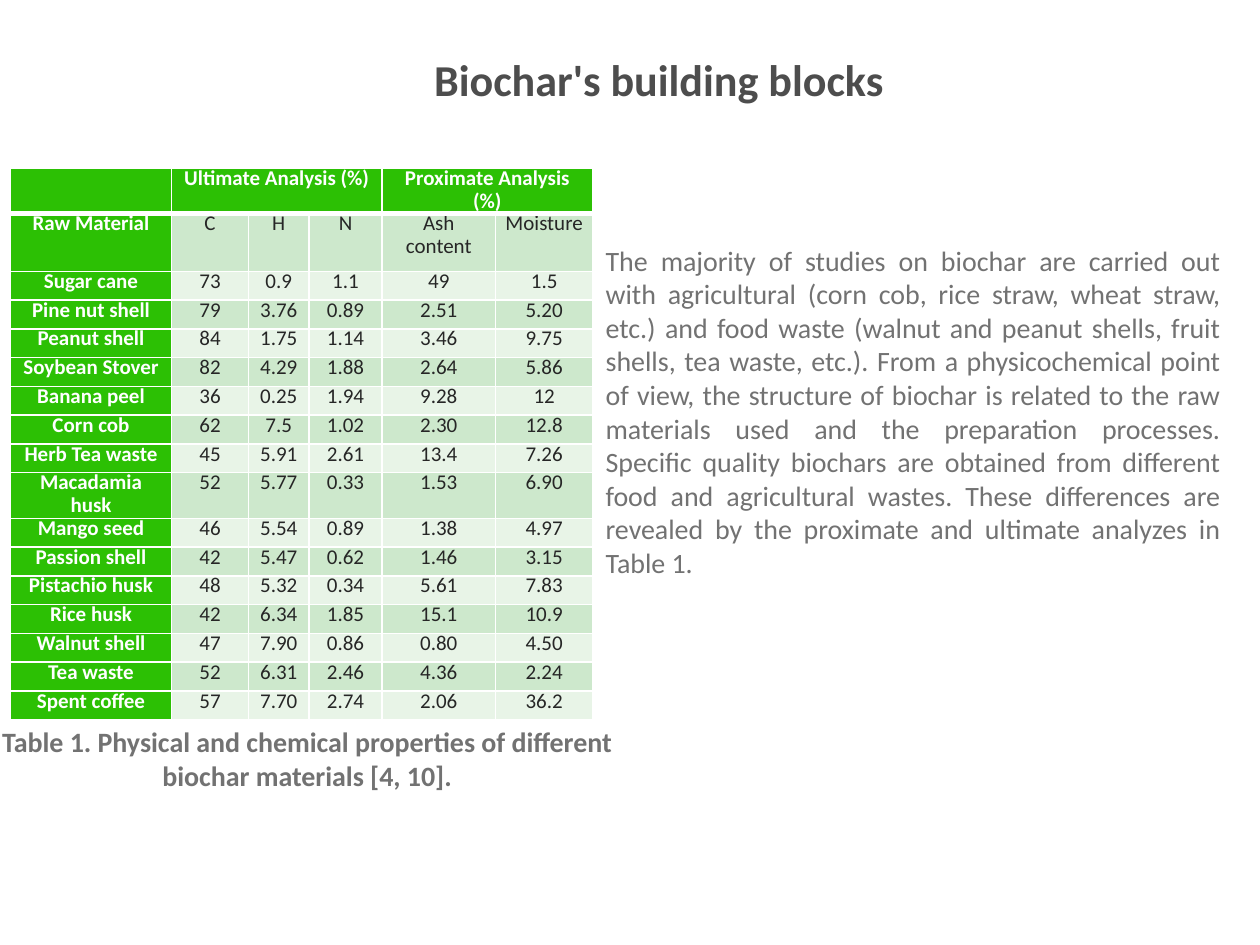
from lxml.etree import SubElement
from pptx import Presentation
from pptx.dml.color import RGBColor
from pptx.enum.text import MSO_ANCHOR, PP_ALIGN
from pptx.oxml.ns import qn
from pptx.util import Cm, Pt

FONT = "Calibri"
WHITE = RGBColor(0xFF, 0xFF, 0xFF)
GREEN = RGBColor(0x2C, 0xC0, 0x04)
DARK_BAND = RGBColor(0xCD, 0xE8, 0xCC)
LIGHT_BAND = RGBColor(0xE8, 0xF4, 0xE7)
TITLE_GRAY = RGBColor(0x4D, 0x4D, 0x4D)
TEXT_GRAY = RGBColor(0x72, 0x72, 0x72)
CELL_TEXT = RGBColor(0x26, 0x26, 0x26)

BODY = (
    "The majority of studies on biochar are carried out with agricultural (corn cob, "
    "rice straw, wheat straw, etc.) and food waste (walnut and peanut shells, fruit "
    "shells, tea waste, etc.). From a physicochemical point of view, the structure of "
    "biochar is related to the raw materials used and the preparation processes. "
    "Specific quality biochars are obtained from different food and agricultural "
    "wastes. These differences are revealed by the proximate and ultimate analyzes "
    "in Table 1."
)
CAPTION = (
    "Table 1. Physical and chemical properties of different biochar materials [4, 10]."
)

COLUMN_WIDTHS = (3.25, 1.55, 1.22, 1.47, 2.29, 1.96)
GROUP_HEIGHT, HEADING_HEIGHT, ROW_HEIGHT = 0.91, 1.16, 0.58
ROWS = (
    ("", "Ultimate Analysis (%)", "", "", "Proximate Analysis (%)", ""),
    ("Raw Material", "C", "H", "N", "Ash content", "Moisture"),
    ("Sugar cane", "73", "0.9", "1.1", "49", "1.5"),
    ("Pine nut shell", "79", "3.76", "0.89", "2.51", "5.20"),
    ("Peanut shell", "84", "1.75", "1.14", "3.46", "9.75"),
    ("Soybean Stover", "82", "4.29", "1.88", "2.64", "5.86"),
    ("Banana peel", "36", "0.25", "1.94", "9.28", "12"),
    ("Corn cob", "62", "7.5", "1.02", "2.30", "12.8"),
    ("Herb Tea waste", "45", "5.91", "2.61", "13.4", "7.26"),
    ("Macadamia husk", "52", "5.77", "0.33", "1.53", "6.90"),
    ("Mango seed", "46", "5.54", "0.89", "1.38", "4.97"),
    ("Passion shell", "42", "5.47", "0.62", "1.46", "3.15"),
    ("Pistachio husk", "48", "5.32", "0.34", "5.61", "7.83"),
    ("Rice husk", "42", "6.34", "1.85", "15.1", "10.9"),
    ("Walnut shell", "47", "7.90", "0.86", "0.80", "4.50"),
    ("Tea waste", "52", "6.31", "2.46", "4.36", "2.24"),
    ("Spent coffee", "57", "7.70", "2.74", "2.06", "36.2"),
)


def format_text(text_frame, text, size, color, bold, alignment):
    text_frame.text = text
    paragraph = text_frame.paragraphs[0]
    paragraph.alignment = alignment
    for run in paragraph.runs:
        run.font.name = FONT
        run.font.size = Pt(size)
        run.font.bold = bold
        run.font.color.rgb = color
    return paragraph


def add_title(slide, left, top, width, height):
    title = slide.shapes.title
    title.left, title.top, title.width, title.height = left, top, width, height
    title.text_frame.vertical_anchor = MSO_ANCHOR.MIDDLE
    title.text_frame.word_wrap = True
    format_text(title.text_frame, "Biochar's building blocks", 25.2, TITLE_GRAY,
                True, PP_ALIGN.CENTER)


def add_text(slide, left, top, width, height, text, bold, alignment):
    box = slide.shapes.add_textbox(left, top, width, height)
    box.text_frame.word_wrap = True
    format_text(box.text_frame, text, 16, TEXT_GRAY, bold, alignment)


def set_borders(cell, top, bottom):
    """Draw white cell borders; they must precede the fill in the XML."""
    properties = cell._tc.get_or_add_tcPr()
    for side, width in (("L", 1), ("R", 1), ("T", top), ("B", bottom)):
        line = SubElement(properties, qn(f"a:ln{side}"), w=str(Pt(width)))
        fill = SubElement(line, qn("a:solidFill"))
        SubElement(fill, qn("a:srgbClr"), val=str(WHITE))


def format_cell(cell, text, row, column):
    is_header = row == 0 or column == 0
    cell.margin_left = cell.margin_right = Cm(0.18)
    cell.margin_top = cell.margin_bottom = 0
    set_borders(cell, 3 if row == 1 else 1, 3 if row == 0 else 1)
    cell.fill.solid()
    band = DARK_BAND if row % 2 else LIGHT_BAND
    cell.fill.fore_color.rgb = GREEN if is_header else band
    paragraph = format_text(cell.text_frame, text, 12,
                            WHITE if is_header else CELL_TEXT,
                            is_header, PP_ALIGN.CENTER)
    paragraph.line_spacing = Pt(13)


def add_analysis_table(slide, left, top):
    heights = [GROUP_HEIGHT, HEADING_HEIGHT] + [ROW_HEIGHT] * (len(ROWS) - 2)
    table = slide.shapes.add_table(
        len(ROWS), len(COLUMN_WIDTHS), left, top,
        Cm(sum(COLUMN_WIDTHS)), Cm(sum(heights))).table
    table.first_col = True
    for column, width in zip(table.columns, COLUMN_WIDTHS):
        column.width = Cm(width)
    for row, height in zip(table.rows, heights):
        row.height = Cm(height)
    for row, texts in enumerate(ROWS):
        for column, text in enumerate(texts):
            format_cell(table.cell(row, column), text, row, column)
    # Group headings span their columns
    table.cell(0, 1).merge(table.cell(0, 3))
    table.cell(0, 4).merge(table.cell(0, 5))


def main():
    presentation = Presentation()
    presentation.slide_width, presentation.slide_height = Cm(25.4), Cm(19.05)
    slide = presentation.slides.add_slide(presentation.slide_layouts[5])

    add_title(slide, Cm(7.72), Cm(1), Cm(11.13), Cm(1.19))
    # Explanation to the right of the table
    add_text(slide, Cm(11.96), Cm(4.78), Cm(12.9), Cm(7.09), BODY,
             False, PP_ALIGN.JUSTIFY)
    add_analysis_table(slide, Cm(0.21), Cm(3.39))
    # Table caption
    add_text(slide, Cm(-0.89), Cm(14.48), Cm(14.17), Cm(1.63), CAPTION,
             True, PP_ALIGN.CENTER)

    presentation.save("out.pptx")


if __name__ == "__main__":
    main()
